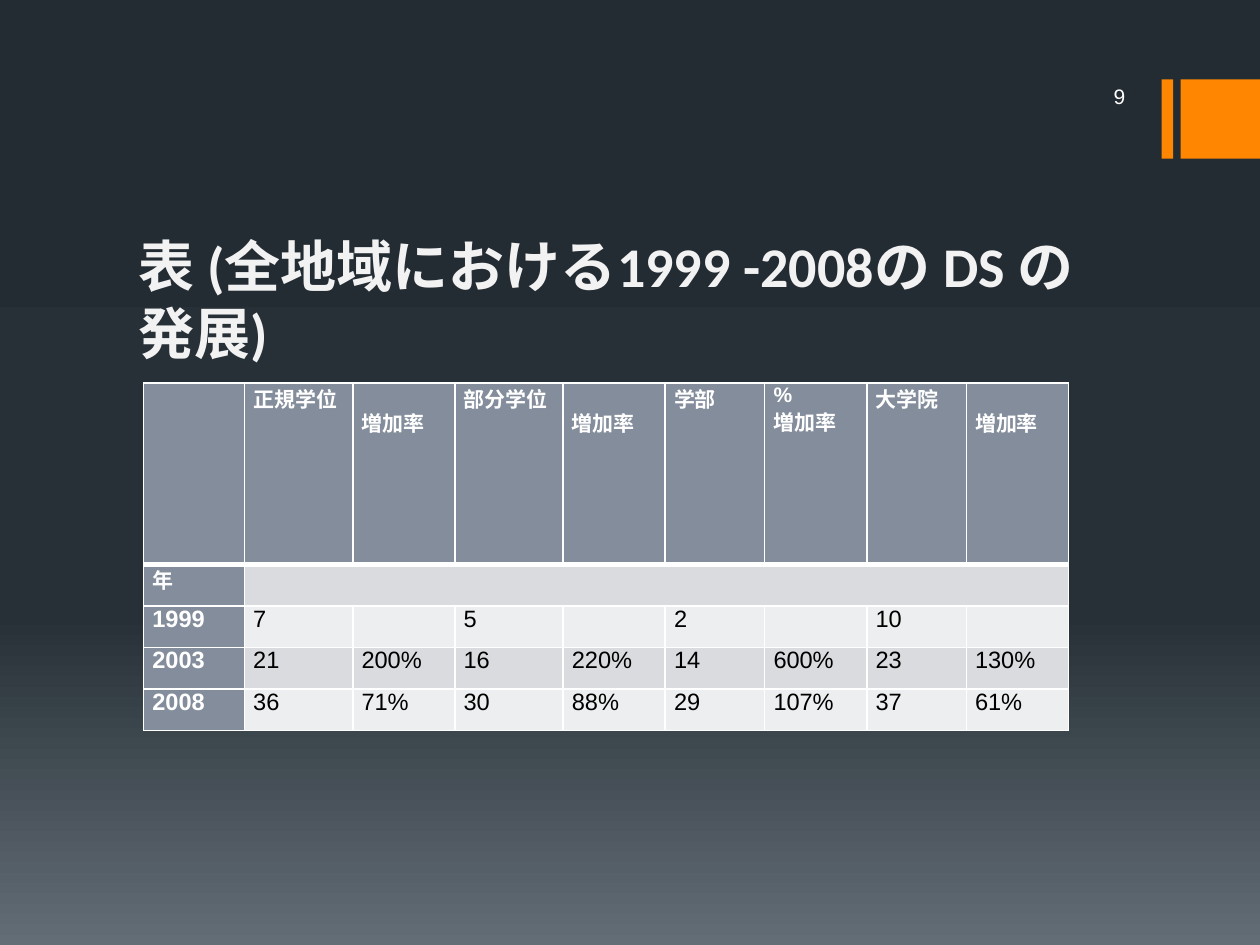
from lxml.etree import SubElement
from pptx import Presentation
from pptx.dml.color import RGBColor
from pptx.enum.shapes import MSO_SHAPE
from pptx.enum.text import MSO_ANCHOR, PP_ALIGN
from pptx.oxml.ns import qn
from pptx.util import Inches, Pt

# Content
TITLE = "表 (全地域における1999 -2008の DS の発展)"
PAGE_NUMBER = "9"
HEADER = ["", "正規学位", "増加率", "部分学位", "増加率", "学部", "%\n増加率", "大学院", "増加率"]
ROWS = [
    ["年"] + [""] * 8,
    ["1999", "7", "", "5", "", "2", "", "10", ""],
    ["2003", "21", "200%", "16", "220%", "14", "600%", "23", "130%"],
    ["2008", "36", "71%", "30", "88%", "29", "107%", "37", "61%"],
]

# Look
COLORS = {"accent": "FF8600", "title": "F2F2F2", "white": "FFFFFF", "black": "000000",
          "heading": "838D9B", "dark band": "D9DBDE", "light band": "EDEEEF"}
BACKGROUND_STOPS = [(0, "242C33"), (65, "273037"), (100, "636D76")]
COLUMN_WIDTHS = [0.8, 0.86, 0.81, 0.86, 0.81, 0.79, 0.81, 0.79, 0.81]
HEADER_HEIGHT, ROW_HEIGHT = 1.44, 0.33
HEADER_LINE = 0.19
ACCENT_BARS = [(9.22, 0.09), (9.37, 0.63)]


def color(name):
    return RGBColor.from_string(COLORS[name])


def set_font(paragraph, name, size, color_name, bold=False):
    font = paragraph.font
    font.name, font.size, font.bold = name, Pt(size), bold
    font.color.rgb = color(color_name)


def add_text(slide, text, box, anchor, alignment, *font):
    frame = slide.shapes.add_textbox(*map(Inches, box)).text_frame
    frame.word_wrap = True
    frame.vertical_anchor = anchor
    paragraph = frame.paragraphs[0]
    paragraph.text, paragraph.alignment = text, alignment
    set_font(paragraph, *font)


def set_background(slide):
    fill = slide.background.fill
    fill.gradient()
    fill.gradient_angle = 270
    stops = slide.element.find(".//" + qn("a:gsLst"))
    for stop in list(stops):
        stops.remove(stop)
    for percent, value in BACKGROUND_STOPS:
        stop = SubElement(stops, qn("a:gs"), pos=str(percent * 1000))
        SubElement(stop, qn("a:srgbClr"), val=value)


def set_borders(cell, top, bottom):
    properties = cell._tc.get_or_add_tcPr()
    for side, width in (("L", 1), ("R", 1), ("T", top), ("B", bottom)):
        line = SubElement(properties, qn("a:ln" + side), w=str(Pt(width)))
        fill = SubElement(line, qn("a:solidFill"))
        SubElement(fill, qn("a:srgbClr"), val=COLORS["white"])


def style_cell(cell, text, row, column):
    heading = row == 0 or column == 0
    band = "dark band" if row % 2 else "light band"
    set_borders(cell, 3 if row == 1 else 1, 3 if row == 0 else 1)
    cell.fill.solid()
    cell.fill.fore_color.rgb = color("heading" if heading else band)
    cell.margin_left = cell.margin_right = Inches(0.07)
    # A lone growth-rate heading sits on the second line
    cell.margin_top = Inches(HEADER_LINE if text == "増加率" else 0)
    cell.margin_bottom = 0
    cell.text = text
    for paragraph in cell.text_frame.paragraphs:
        set_font(paragraph, "Arial", 12 if row < 2 else 13.5,
                 "white" if heading else "black", heading)


def add_degree_table(slide):
    records = [HEADER] + ROWS
    heights = [HEADER_HEIGHT] + [ROW_HEIGHT] * len(ROWS)
    size = [Inches(sum(COLUMN_WIDTHS)), Inches(sum(heights))]
    table = slide.shapes.add_table(len(records), len(HEADER),
                                   Inches(1.14), Inches(3.04), *size).table
    table.first_row = table.horz_banding = False
    for column, width in zip(table.columns, COLUMN_WIDTHS):
        column.width = Inches(width)
    for row, height in zip(table.rows, heights):
        row.height = Inches(height)
    for row, record in enumerate(records):
        for column, text in enumerate(record):
            style_cell(table.cell(row, column), text, row, column)
    table.cell(1, 1).merge(table.cell(1, len(HEADER) - 1))


def main():
    presentation = Presentation()
    presentation.slide_width, presentation.slide_height = Inches(10), Inches(7.5)
    slide = presentation.slides.add_slide(presentation.slide_layouts[6])
    set_background(slide)

    # Accent bars at the right edge
    for left, width in ACCENT_BARS:
        shape = slide.shapes.add_shape(MSO_SHAPE.RECTANGLE, Inches(left), Inches(0.63),
                                       Inches(width), Inches(0.63))
        shape.shadow.inherit = False
        shape.fill.solid()
        shape.fill.fore_color.rgb = color("accent")
        shape.line.fill.background()

    # Title, table and page number
    add_text(slide, TITLE, (1, 1.69, 8, 1.26), MSO_ANCHOR.BOTTOM, PP_ALIGN.LEFT,
             "Calibri", 32, "title", True)
    add_degree_table(slide)
    add_text(slide, PAGE_NUMBER, (8, 0.6, 1.03, 0.33), MSO_ANCHOR.MIDDLE, PP_ALIGN.RIGHT,
             "Arial", 12, "white")
    presentation.save("out.pptx")


if __name__ == "__main__":
    main()
